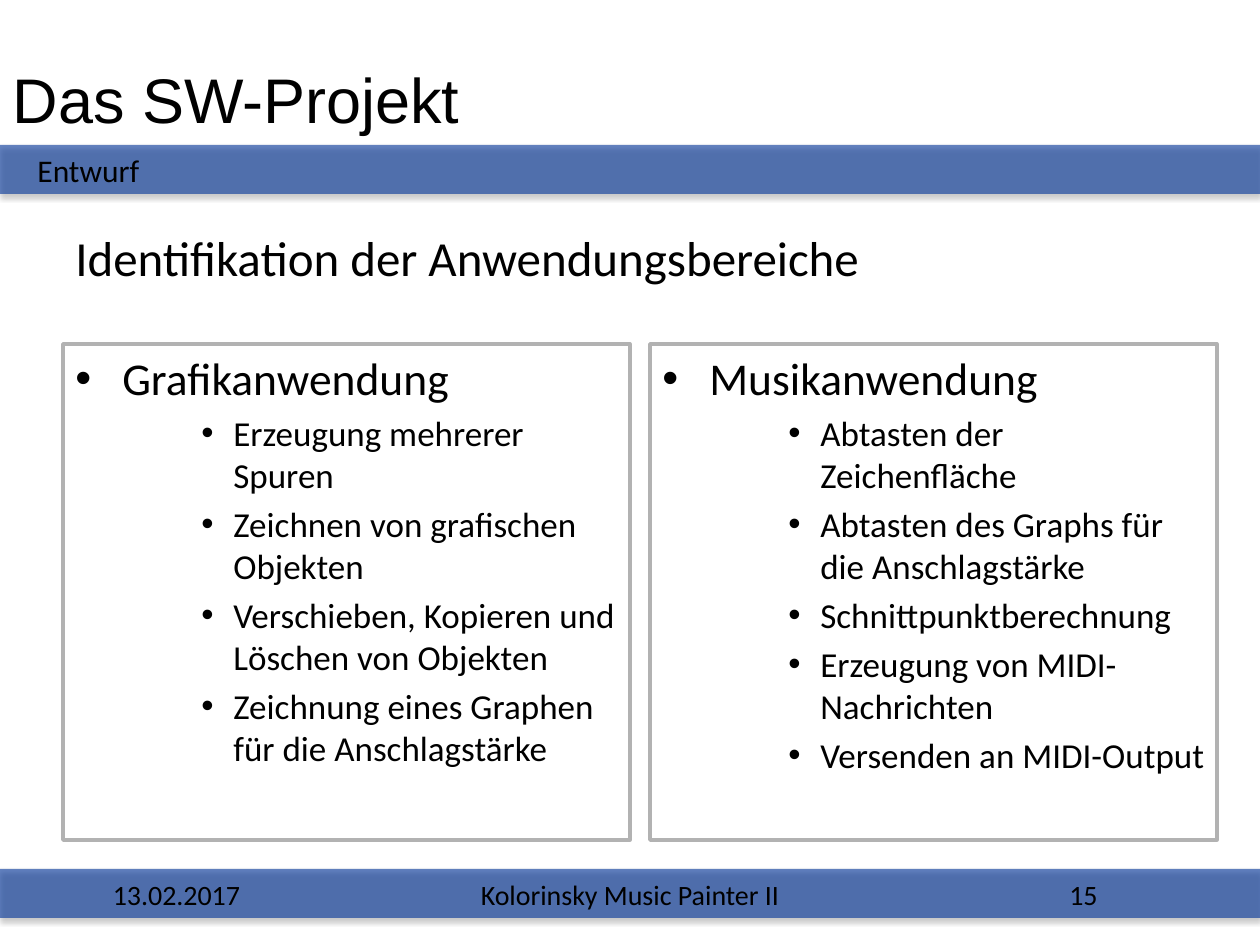
from lxml.etree import SubElement
from pptx import Presentation
from pptx.dml.color import RGBColor
from pptx.enum.shapes import MSO_SHAPE as Shape
from pptx.enum.text import MSO_ANCHOR as Anchor, PP_ALIGN as Align
from pptx.oxml.ns import qn
from pptx.util import Pt

PX = 914400 / 126
BLACK = RGBColor(0x00, 0x00, 0x00)
WHITE = RGBColor(0xFF, 0xFF, 0xFF)
BLUE = RGBColor(0x00, 0x33, 0x99)
GRAY = RGBColor(0xB2, 0xB2, 0xB2)

SLIDE_W, SLIDE_H = 1260, 945
COLUMN_W, COLUMN_H, COLUMN_STEP = 567, 496, 587
COLUMNS = [
    ("Grafikanwendung", [
        "Erzeugung mehrerer Spuren",
        "Zeichnen von grafischen Objekten",
        "Verschieben, Kopieren und Löschen von Objekten",
        "Zeichnung eines Graphen für die Anschlagstärke",
    ]),
    ("Musikanwendung", [
        "Abtasten der Zeichenfläche",
        "Abtasten des Graphs für die Anschlagstärke",
        "Schnittpunktberechnung",
        "Erzeugung von MIDI-Nachrichten",
        "Versenden an MIDI-Output",
    ]),
]


def emu(*lengths):
    return [round(length * PX) for length in lengths]


def format_paragraph(paragraph, size, font="Calibri", align=Align.LEFT):
    paragraph.alignment = align
    for run in paragraph.runs:
        run.font.size = Pt(size)
        run.font.name = font
        run.font.color.rgb = BLACK


def add_label(slide, box, text, size, align=Align.LEFT, anchor=Anchor.MIDDLE):
    label = slide.shapes.add_textbox(*emu(*box))
    frame = label.text_frame
    frame.word_wrap = True
    frame.vertical_anchor = anchor
    frame.text = text
    format_paragraph(frame.paragraphs[0], size, align=align)


def add_band(slide, box, opacity):
    """Translucent blue bar with a soft shadow below it."""
    band = slide.shapes.add_shape(Shape.RECTANGLE, *emu(*box))
    band.shadow.inherit = False
    band.fill.solid()
    band.fill.fore_color.rgb = BLUE
    band.line.fill.background()
    properties = band._element.spPr
    fill_color = properties.find(qn("a:solidFill")).find(qn("a:srgbClr"))
    SubElement(fill_color, qn("a:alpha"), val=str(opacity * 1000))
    shadow = SubElement(properties.find(qn("a:effectLst")), qn("a:outerShdw"),
                        blurRad=str(Pt(3.1)), dist=str(Pt(1.8)),
                        dir="5400000", rotWithShape="0")
    shadow_color = SubElement(shadow, qn("a:srgbClr"), val="000000")
    SubElement(shadow_color, qn("a:alpha"), val="35000")


def add_header(slide, left, top, width):
    add_band(slide, (left, top + 100, width, 49), 60)
    title = slide.shapes.title
    title.left, title.top, title.width, title.height = emu(left, top, width, 107)
    title.text_frame.text = "Das SW-Projekt"
    title.text_frame.vertical_anchor = Anchor.MIDDLE
    format_paragraph(title.text_frame.paragraphs[0], 36, "Arial")
    add_label(slide, (left + 25, top + 100, 1201, 50), "Entwurf", 18,
              anchor=Anchor.TOP)


def add_footer(slide, left, top, width):
    add_band(slide, (left, top, width, 49), 61)
    side = 353
    fields = [("13.02.2017", side),
              ("Kolorinsky Music Painter II", width - 2 * side),
              ("15", side)]
    for text, field_width in fields:
        add_label(slide, (left, top, field_width, 50), text, 16, Align.CENTER)
        left += field_width


def format_bullet(paragraph, size, margin, hanging):
    format_paragraph(paragraph, size)
    paragraph.space_before = Pt(size // 5)
    properties = paragraph._p.get_or_add_pPr()
    margin, hanging = emu(margin, hanging)
    properties.set("marL", str(margin))
    properties.set("indent", str(-hanging))
    SubElement(properties, qn("a:buFont"), typeface="Arial")
    SubElement(properties, qn("a:buChar"), char="•")


def add_column(slide, box, heading, items):
    column = slide.shapes.add_shape(Shape.RECTANGLE, *emu(*box))
    column.shadow.inherit = False
    column.fill.solid()
    column.fill.fore_color.rgb = WHITE
    column.line.color.rgb = GRAY
    column.line.width = Pt(2)
    frame = column.text_frame
    frame.word_wrap = True
    frame.vertical_anchor = Anchor.TOP
    frame.text = heading
    format_bullet(frame.paragraphs[0], 26, 47, 47)
    for item in items:
        paragraph = frame.add_paragraph()
        paragraph.text = item
        paragraph.level = 2
        format_bullet(paragraph, 20, 158, 32)


def add_content(slide, left, top):
    add_label(slide, (left, top, 1134, 83), "Identifikation der Anwendungsbereiche",
              28, anchor=Anchor.TOP)
    for index, (heading, items) in enumerate(COLUMNS):
        box = (left + index * COLUMN_STEP, top + 123, COLUMN_W, COLUMN_H)
        add_column(slide, box, heading, items)


def main():
    presentation = Presentation()
    presentation.slide_width, presentation.slide_height = emu(SLIDE_W, SLIDE_H)
    slide = presentation.slides.add_slide(presentation.slide_layouts[5])
    add_header(slide, 0, 45, SLIDE_W)
    add_content(slide, 63, 221)
    add_footer(slide, 0, 869, SLIDE_W)
    presentation.save("out.pptx")


if __name__ == "__main__":
    main()
